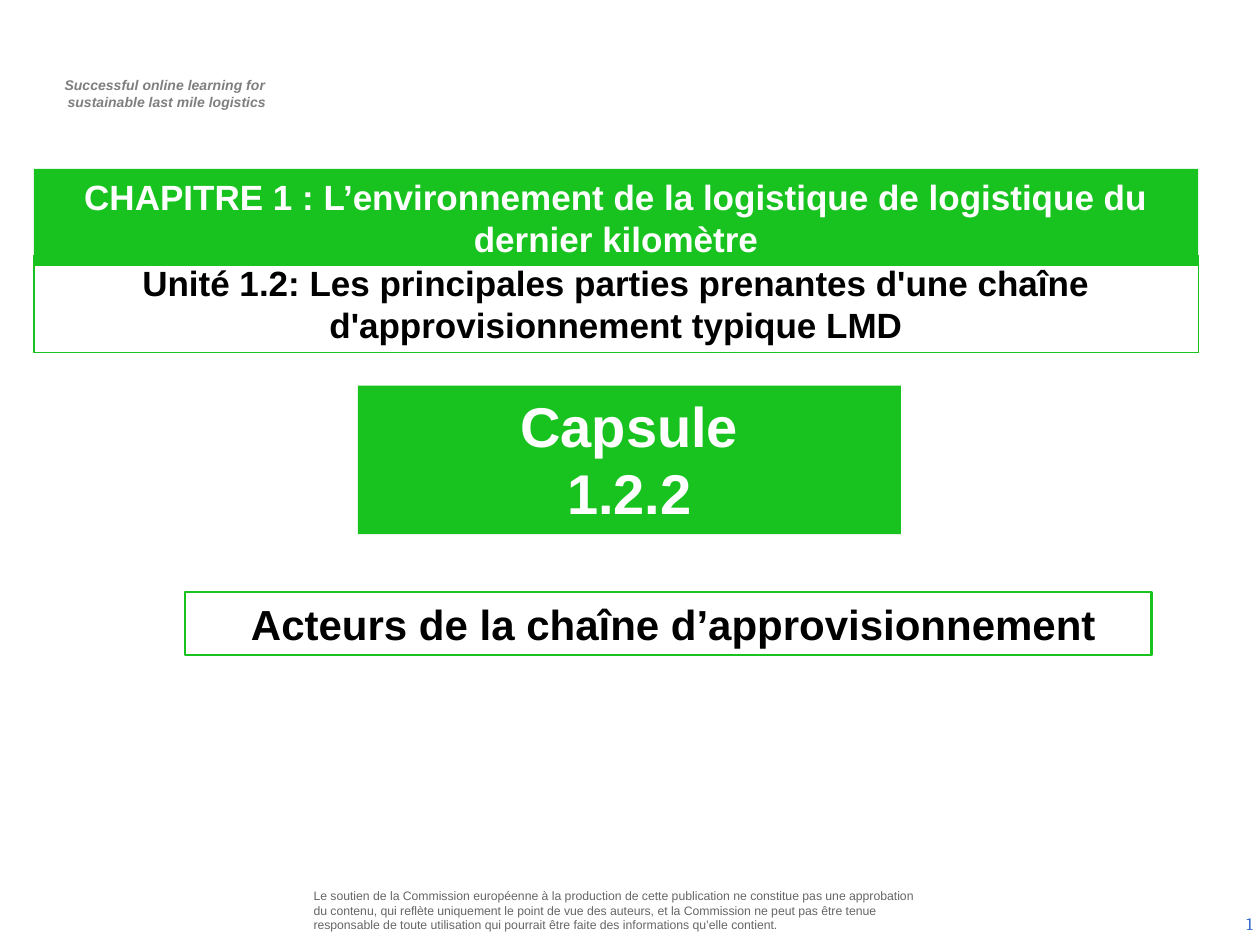
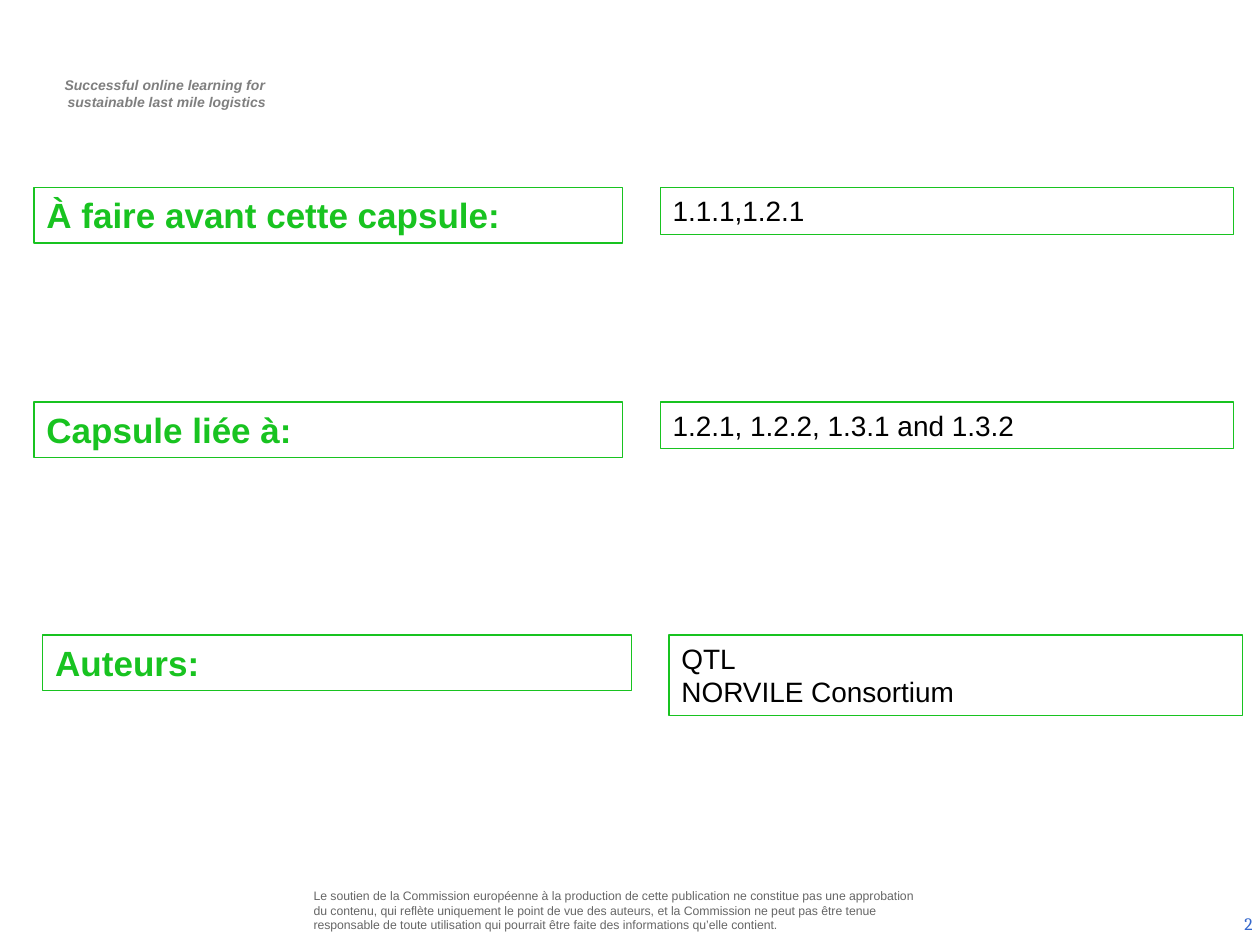
from pptx import Presentation
from pptx.dml.color import RGBColor
from pptx.enum.shapes import MSO_SHAPE
from pptx.enum.text import MSO_ANCHOR, PP_ALIGN
from pptx.util import Inches, Pt

GREEN = RGBColor(0x18, 0xC3, 0x20)
WHITE = RGBColor(0xFF, 0xFF, 0xFF)
BLACK = RGBColor(0x00, 0x00, 0x00)
TAGLINE_GREY = RGBColor(0x7F, 0x7F, 0x7F)
FOOTER_GREY = RGBColor(0x66, 0x66, 0x66)
NUMBER_BLUE = RGBColor(0x33, 0x66, 0xCC)

# Content shared by the slides
TAGLINE = ["Successful online learning for ", "sustainable last mile logistics"]
DISCLAIMER = [
    "Le soutien de la Commission européenne à la production de cette publication "
    "ne constitue pas une approbation du contenu, qui reflète uniquement le point "
    "de vue des auteurs, et la Commission ne peut pas être tenue responsable de "
    "toute utilisation qui pourrait être faite des informations qu’elle contient."
]

# Title slide: lines, (left, top, width, height), size, is filled, line width
TITLE_BOXES = [
    (["Capsule", "1.2.2"], (2.84, 3.06, 4.31, 1.18), 32, True, 0),
    ([" Acteurs de la chaîne d’approvisionnement"],
     (1.47, 4.7, 7.67, 0.5), 24, False, 1.5),
    (["CHAPITRE 1 : L’environnement de la logistique de logistique du dernier kilomètre"],
     (0.27, 1.34, 9.24, 0.77), 20, True, 0),
    (["Unité 1.2: Les principales parties prenantes d'une chaîne "
      "d'approvisionnement typique LMD"],
     (0.27, 2.03, 9.24, 0.77), 20, False, 0.75),
]

# Capsule sheet: label, values, top, shift to the right
SHEET_ROWS = [
    ("À faire avant cette capsule:", ["1.1.1,1.2.1"], 1.49, 0),
    ("Capsule liée à:", ["1.2.1, 1.2.2, 1.3.1 and 1.3.2"], 3.19, 0),
    ("Auteurs:", ["QTL", "NORVILE Consortium"], 5.04, 0.07),
]
LABEL_LEFT, LABEL_WIDTH, LABEL_HEIGHT = 0.27, 4.67, 0.44
VALUE_LEFT, VALUE_WIDTH = 5.24, 4.55
VALUE_LINE_HEIGHT, VALUE_PADDING = 0.27, 0.1


def write_lines(shape, lines, size, color, bold=False, italic=False,
                align=PP_ALIGN.LEFT, font="Arial", anchor=MSO_ANCHOR.TOP):
    frame = shape.text_frame
    frame.word_wrap = True
    frame.vertical_anchor = anchor
    for index, line in enumerate(lines):
        paragraph = frame.paragraphs[0] if index == 0 else frame.add_paragraph()
        paragraph.alignment = align
        run = paragraph.add_run()
        run.text = line
        run.font.name = font
        run.font.size = Pt(size)
        run.font.bold = bold
        run.font.italic = italic
        run.font.color.rgb = color


def add_text(slide, place, lines, size, color, **style):
    shape = slide.shapes.add_textbox(*map(Inches, place))
    write_lines(shape, lines, size, color, **style)
    return shape


def add_box(slide, place, lines, size, color, fill=None, line_width=0.75, **style):
    shape = slide.shapes.add_shape(MSO_SHAPE.RECTANGLE, *map(Inches, place))
    shape.shadow.inherit = False
    if fill is None:
        shape.fill.background()
    else:
        shape.fill.solid()
        shape.fill.fore_color.rgb = fill
    if line_width:
        shape.line.color.rgb = GREEN
        shape.line.width = Pt(line_width)
    else:
        shape.line.fill.background()
    write_lines(shape, lines, size, color, **style)


def add_slide(presentation):
    """Blank slide with the tagline, disclaimer and page number."""
    slide = presentation.slides.add_slide(presentation.slide_layouts[6])
    tagline = add_text(slide, (0.29, 0.56, 2.03, 0.37), TAGLINE, 8, TAGLINE_GREY,
                       bold=True, italic=True, align=PP_ALIGN.CENTER)
    for paragraph in tagline.text_frame.paragraphs:
        paragraph._p.get_or_add_pPr().set("marL", str(Inches(0.04)))
    add_text(slide, (2.39, 7, 5.03, 0.45), DISCLAIMER, 7, FOOTER_GREY)
    add_text(slide, (7.71, 7.13, 2.33, 0.4), [str(len(presentation.slides))], 10,
             NUMBER_BLUE, align=PP_ALIGN.RIGHT, font="Cambria",
             anchor=MSO_ANCHOR.MIDDLE)
    return slide


def build_title_slide(presentation):
    slide = add_slide(presentation)
    for lines, place, size, filled, line_width in TITLE_BOXES:
        add_box(slide, place, lines, size, WHITE if filled else BLACK,
                fill=GREEN if filled else None, line_width=line_width,
                bold=True, align=PP_ALIGN.CENTER)


def build_capsule_sheet(presentation):
    slide = add_slide(presentation)
    for label, values, top, shift in SHEET_ROWS:
        add_box(slide, (LABEL_LEFT + shift, top, LABEL_WIDTH, LABEL_HEIGHT),
                [label], 20, GREEN, fill=WHITE, bold=True)
        height = VALUE_PADDING + VALUE_LINE_HEIGHT * len(values)
        add_box(slide, (VALUE_LEFT + shift, top, VALUE_WIDTH, height),
                values, 16, BLACK, fill=WHITE)


def main():
    presentation = Presentation()
    presentation.slide_width = Inches(10)
    presentation.slide_height = Inches(7.5)
    build_title_slide(presentation)
    build_capsule_sheet(presentation)
    presentation.save("out.pptx")


if __name__ == "__main__":
    main()
